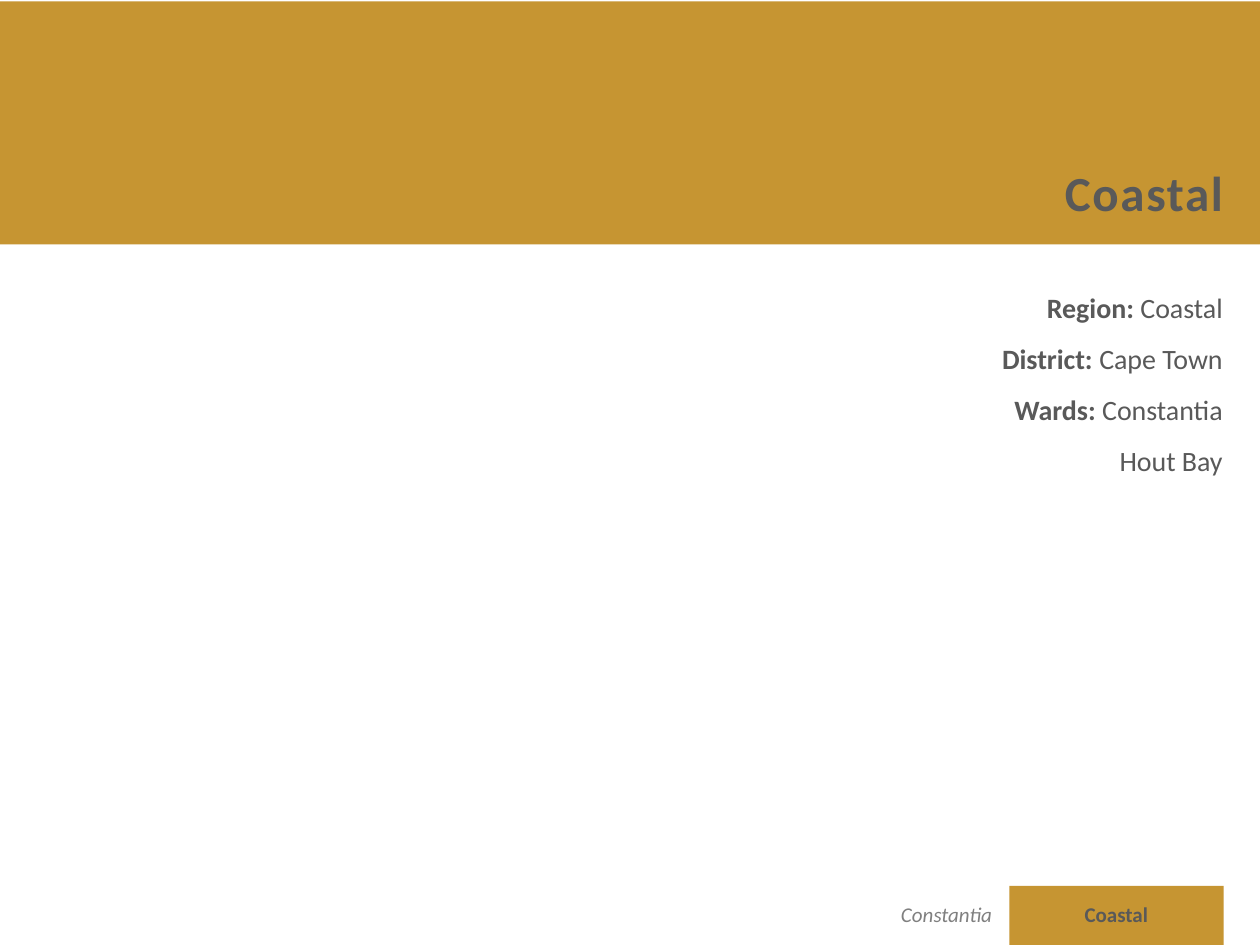
"""Build the Coastal region slide."""
from dataclasses import dataclass

from pptx import Presentation
from pptx import util as u
from pptx.dml.color import RGBColor
from pptx.enum import shapes, text
from pptx.slide import Slide

COLOURS = {"gold": "C69532", "white": "FFFFFF", "dark": "595959", "grey": "808080"}
FONT = "Calibri"
RIGHT, CENTER = text.PP_ALIGN.RIGHT, text.PP_ALIGN.CENTER


@dataclass(frozen=True)
class Box:
    left: float
    top: float
    width: float
    height: float

    def lengths(self) -> list[u.Cm]:
        return [u.Cm(n) for n in (self.left, self.top, self.width, self.height)]


@dataclass(frozen=True)
class Band:
    box: Box
    colour: str


@dataclass(frozen=True)
class Span:
    wording: str
    bold: bool = False


@dataclass(frozen=True)
class Label:
    box: Box
    lines: tuple[tuple[Span, ...], ...]
    size: int
    align: text.PP_ALIGN = RIGHT
    colour: str = "dark"
    italic: bool = False
    wrap: bool = True
    line_spacing: float = 1.0
    space_after: int = 0
    tracking: int = 0


FOOTER_LEFT, FOOTER_TOP, TAB_WIDTH, TAB_HEIGHT = 16.03, 17.86, 4.32, 1.19

BANDS = [Band(Box(0, 0.03, 25.4, 4.9), "gold")] + [
    Band(Box(FOOTER_LEFT + i * TAB_WIDTH, FOOTER_TOP, TAB_WIDTH, TAB_HEIGHT), colour)
    for i, colour in enumerate(("white", "gold"))
]

LABELS = [
    Label(
        Box(16.98, 5.6, 7.92, 5),
        (
            (Span("Region: ", True), Span("Coastal")),
            (Span("District: ", True), Span("Cape Town")),
            (Span("Wards: ", True), Span("Constantia")),
            (Span("Hout Bay"),),
        ),
        16, line_spacing=1.2, space_after=6,
    ),
    Label(Box(21, 3.15, 3.91, 1.45), ((Span("Coastal", True),),), 28,
          wrap=False, tracking=100),
    Label(Box(21.54, 18.04, 1.93, 0.76), ((Span("Coastal", True),),), 12,
          align=CENTER, wrap=False),
    Label(Box(FOOTER_LEFT, 18.05, 4.22, 0.76), ((Span("Constantia"),),), 12,
          colour="grey", italic=True),
]


def draw_band(slide: Slide, band: Band) -> None:
    shape = slide.shapes.add_shape(shapes.MSO_SHAPE.RECTANGLE, *band.box.lengths())
    shape.shadow.inherit = False
    shape.fill.solid()
    shape.fill.fore_color.rgb = RGBColor.from_string(COLOURS[band.colour])
    shape.line.fill.background()


def draw_label(slide: Slide, label: Label) -> None:
    text_frame = slide.shapes.add_textbox(*label.box.lengths()).text_frame
    text_frame.word_wrap = label.wrap
    for i, spans in enumerate(label.lines):
        paragraph = text_frame.add_paragraph() if i else text_frame.paragraphs[0]
        paragraph.alignment = label.align
        paragraph.line_spacing = label.line_spacing
        paragraph.space_after = u.Pt(label.space_after)
        for span in spans:
            run = paragraph.add_run()
            run.text = span.wording
            font = run.font
            font.name = FONT
            font.size = u.Pt(label.size)
            font.bold = span.bold
            font.italic = label.italic
            font.color.rgb = RGBColor.from_string(COLOURS[label.colour])
            if label.tracking:
                run._r.get_or_add_rPr().set("spc", str(label.tracking))


def main() -> None:
    presentation = Presentation()
    presentation.slide_width = u.Cm(25.4)
    presentation.slide_height = u.Cm(19.05)
    slide = presentation.slides.add_slide(presentation.slide_layouts[6])
    for band in BANDS:
        draw_band(slide, band)
    for label in LABELS:
        draw_label(slide, label)
    presentation.save("out.pptx")


if __name__ == "__main__":
    main()
